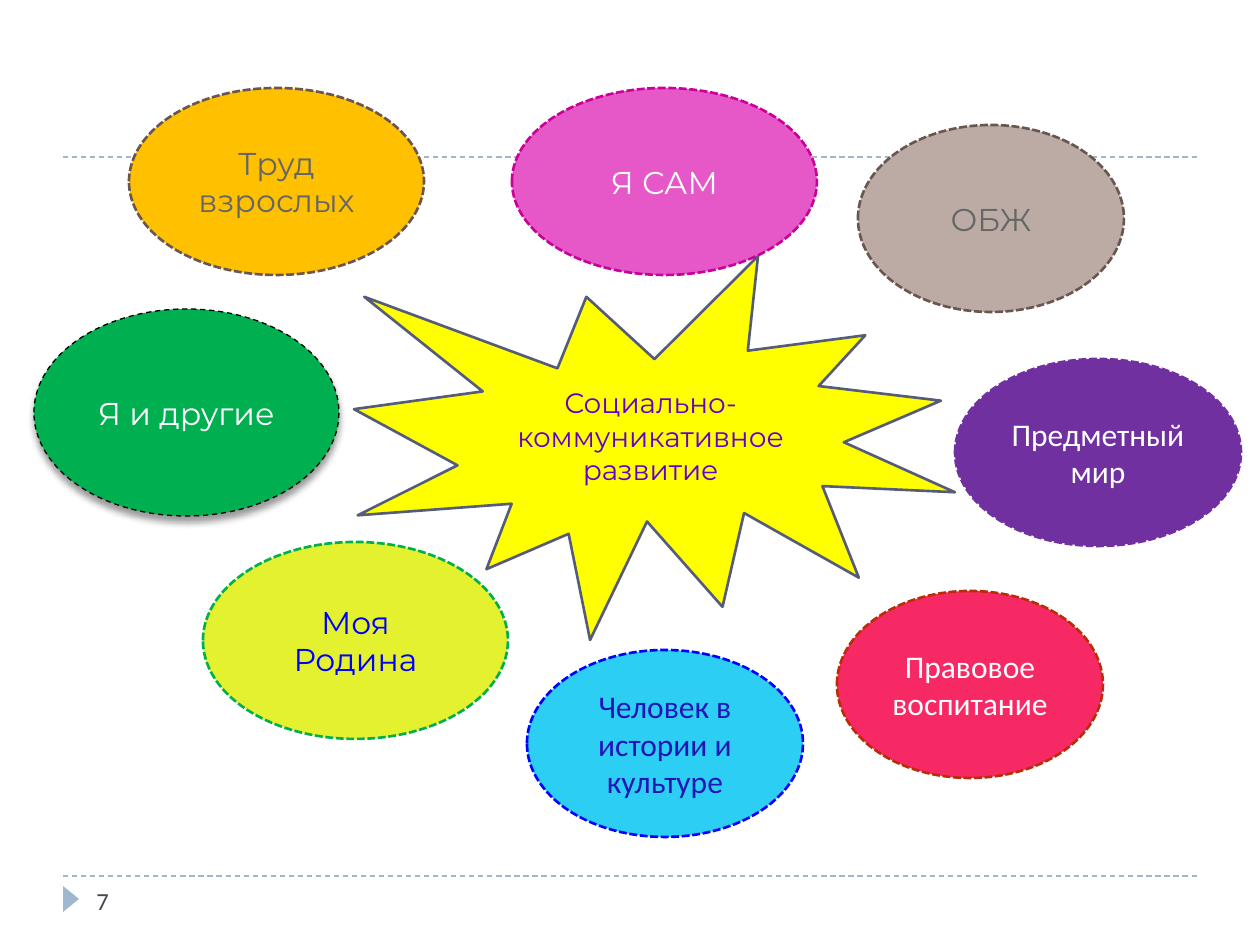
"""Build a slide with eight topic ovals around a central star."""
from lxml import etree
from pptx import Presentation
from pptx.dml.color import RGBColor
from pptx.enum.dml import MSO_LINE
from pptx.enum.shapes import MSO_CONNECTOR, MSO_SHAPE
from pptx.enum.text import MSO_ANCHOR, PP_ALIGN
from pptx.oxml.ns import qn
from pptx.util import Pt

OVAL, STAR, TRIANGLE = MSO_SHAPE.OVAL, MSO_SHAPE.EXPLOSION1, MSO_SHAPE.ISOSCELES_TRIANGLE
STRAIGHT = MSO_CONNECTOR.STRAIGHT
DASH, SYS_DASH = MSO_LINE.DASH, MSO_LINE.SQUARE_DOT
SYS_DASH = MSO_LINE.DASH if SYS_DASH is None else SYS_DASH
MIDDLE, LEFT, CENTER = MSO_ANCHOR.MIDDLE, PP_ALIGN.LEFT, PP_ALIGN.CENTER

PX = 914400 / 126
THEME = {
    "display": "Montserrat", "body": "Calibri",
    "topic": 18, "center": 16, "number": 14,
    "white": "FFFFFF", "gray": "666666", "ink": "464653", "rule": "9FB8CD",
    "star": "FFFF00", "star_line": "545C79", "star_text": "6600CC",
    "pink": "E658C8", "magenta": "CC0099", "taupe": "BCABA5", "brown": "6A5650",
    "red": "F72964", "rust": "BB2C05", "sky": "2CCEF4", "blue": "0000FF",
    "navy": "2115B7", "purple": "7030A0", "orange": "FFC000", "green": "00B050",
    "black": "000000", "lime": "E3F12F",
}


def rgb(name):
    return RGBColor.from_string(THEME[name])


def write(sp, text, size="topic", font="display", color="white", align=CENTER):
    tf = sp.text_frame
    tf.word_wrap = True
    tf.vertical_anchor = MIDDLE
    p = tf.paragraphs[0]
    p.alignment = align
    r = p.add_run()
    r.text = text
    r.font.size = Pt(THEME[size])
    r.font.name = THEME[font]
    r.font.color.rgb = rgb(color)


prs = Presentation()
prs.slide_width, prs.slide_height = round(1260 * PX), round(945 * PX)
s = prs.slides.add_slide(prs.slide_layouts[6])

for y in (876, 157):
    x1, x2, y = [round(v * PX) for v in (63, 1197, y)]
    rule = s.shapes.add_connector(STRAIGHT, x1, y, x2, y)
    rule.line.color.rgb = rgb("rule")
    rule.line.width = Pt(0.75)
    rule.line.dash_style = DASH
    etree.SubElement(rule._element.spPr, qn("a:effectLst"))

marker = s.shapes.add_shape(TRIANGLE, *[round(v * PX) for v in (58, 891, 26, 16)])
marker.rotation = 90
marker.shadow.inherit = False
marker.fill.solid()
marker.fill.fore_color.rgb = rgb("rule")
marker.line.fill.background()

number = s.shapes.add_textbox(*[round(v * PX) for v in (84, 876, 273, 50)])
write(number, "7", size="number", font="body", color="ink", align=LEFT)

topics = [
    (STAR, (354, 256, 601, 384), "star", "star_line", 1.5, None,
     "Социально-коммуникативное развитие", "center", "display", "star_text"),
    (OVAL, (512, 88, 305, 187), "pink", "magenta", 1.5, SYS_DASH,
     "Я САМ", "topic", "display", "white"),
    (OVAL, (858, 125, 266, 187), "taupe", "brown", 1.5, SYS_DASH,
     "ОБЖ", "topic", "display", "gray"),
    (OVAL, (837, 591, 266, 187), "red", "rust", 1.5, SYS_DASH,
     "Правовое воспитание", "topic", "body", "white"),
    (OVAL, (527, 650, 276, 187), "sky", "blue", 1.5, SYS_DASH,
     "Человек в истории и культуре", "topic", "body", "navy"),
    (OVAL, (955, 359, 286, 187), "purple", "purple", 1.5, SYS_DASH,
     "Предметный мир", "topic", "body", "white"),
    (OVAL, (129, 88, 295, 187), "orange", "brown", 1.5, SYS_DASH,
     "Труд взрослых", "topic", "display", "gray"),
    (OVAL, (34, 309, 305, 207), "green", "black", 0.75, DASH,
     "Я и другие", "topic", "display", "white"),
    (OVAL, (203, 542, 305, 197), "lime", "green", 1.5, SYS_DASH,
     "Моя Родина", "topic", "display", "blue"),
]
for kind, box, fill, line, width, dash, text, size, font, color in topics:
    sp = s.shapes.add_shape(kind, *[round(v * PX) for v in box])
    sp.shadow.inherit = False
    sp.fill.solid()
    sp.fill.fore_color.rgb = rgb(fill)
    sp.line.color.rgb = rgb(line)
    sp.line.width = Pt(width)
    if dash:
        sp.line.dash_style = dash
    write(sp, text, size=size, font=font, color=color)
    if fill == "green":
        effects = sp._element.spPr.find(qn("a:effectLst"))
        shadow = etree.SubElement(effects, qn("a:outerShdw"), blurRad=str(Pt(4)),
                                  dist=str(Pt(3.4)), dir="5400000", rotWithShape="0")
        tone = etree.SubElement(shadow, qn("a:srgbClr"), val=THEME["black"])
        etree.SubElement(tone, qn("a:alpha"), val="40000")

prs.save("out.pptx")
